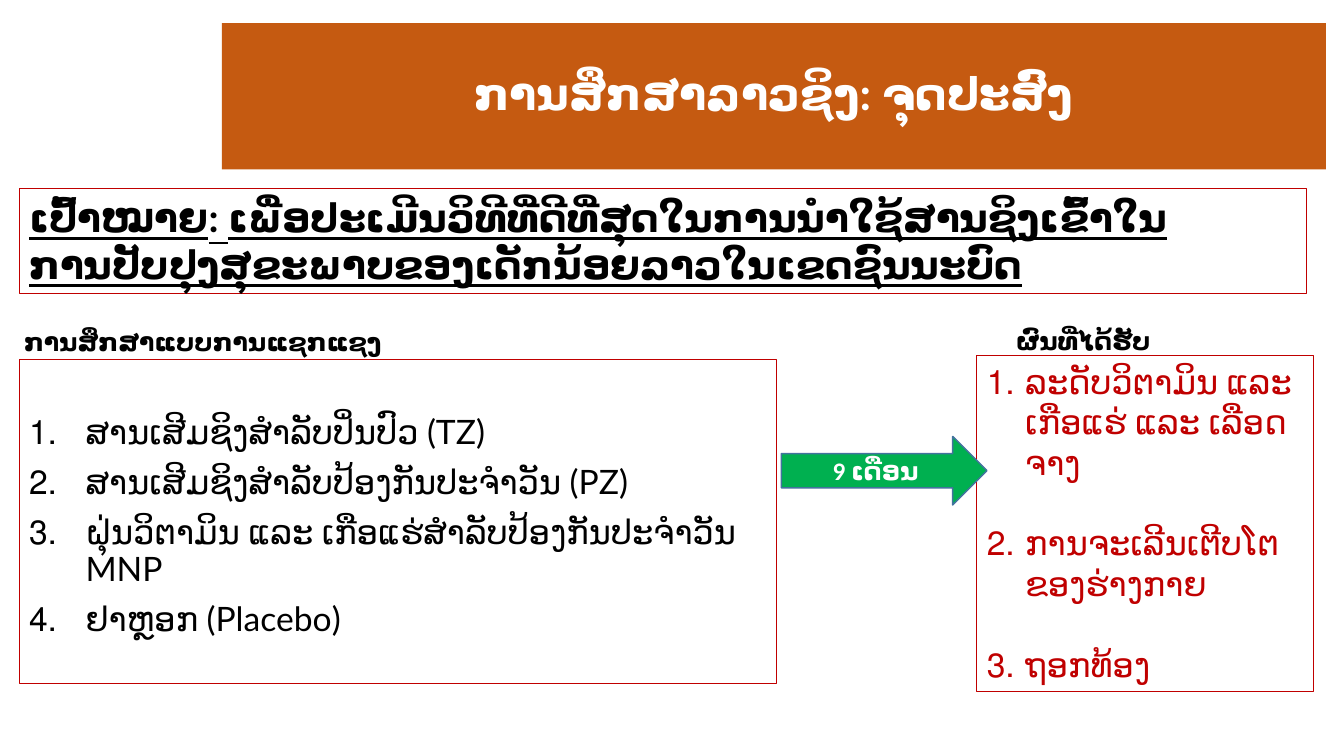
import dataclasses

import lxml.etree
import pptx
import pptx.dml.color
import pptx.enum.shapes
import pptx.enum.text
import pptx.oxml.ns
import pptx.util

SLIDE_WIDTH = pptx.util.Inches(13.33)
SLIDE_HEIGHT = pptx.util.Inches(7.5)
ALIGN = pptx.enum.text.PP_ALIGN
ANCHOR = pptx.enum.text.MSO_ANCHOR
SHAPE = pptx.enum.shapes.MSO_SHAPE


@dataclasses.dataclass(frozen=True)
class Theme:
    banner: str = "C55A11"
    frame: str = "C00000"
    arrow: str = "00B050"
    arrow_edge: str = "43739E"
    ink: str = "000000"
    paper: str = "FFFFFF"
    font: str = "Lato"
    arrow_font: str = "Calibri"
    number_font: str = "Arial"
    title_size: int = 32
    goal_size: int = 28
    list_size: int = 24
    label_size: int = 18


THEME = Theme()


def rgb(code):
    return pptx.dml.color.RGBColor.from_string(code)


def area(left, top, width, height):
    return (
        int(SLIDE_WIDTH * left / 100),
        int(SLIDE_HEIGHT * top / 100),
        int(SLIDE_WIDTH * width / 100),
        int(SLIDE_HEIGHT * height / 100),
    )


def paint(shape, fill, edge, edge_width):
    shape.shadow.inherit = False
    shape.fill.solid()
    shape.fill.fore_color.rgb = rgb(fill)
    shape.line.color.rgb = rgb(edge)
    shape.line.width = pptx.util.Pt(edge_width)


def style(paragraph, size, color, bold=False, underline=None, font=THEME.font):
    for run in paragraph.runs:
        run.font.name = font
        run.font.size = pptx.util.Pt(size)
        run.font.color.rgb = rgb(color)
        run.font.bold = bold
        run.font.underline = underline


def number(paragraph, indent):
    properties = paragraph._p.get_or_add_pPr()
    properties.set("marL", str(pptx.util.Inches(indent)))
    properties.set("indent", str(-pptx.util.Inches(indent)))
    qn = pptx.oxml.ns.qn
    lxml.etree.SubElement(properties, qn("a:buFont"), typeface=THEME.number_font)
    lxml.etree.SubElement(properties, qn("a:buAutoNum"), type="arabicPeriod")


def add_title(slide, text, place):
    title = slide.shapes.title
    title.left, title.top, title.width, title.height = place
    title.fill.solid()
    title.fill.fore_color.rgb = rgb(THEME.banner)
    frame = title.text_frame
    frame.text = text
    frame.vertical_anchor = ANCHOR.MIDDLE
    heading = frame.paragraphs[0]
    heading.alignment = ALIGN.CENTER
    heading.line_spacing = 0.9
    style(heading, THEME.title_size, THEME.paper, bold=True)


def add_framed_box(slide, place):
    box = slide.shapes.add_shape(SHAPE.RECTANGLE, *place)
    paint(box, THEME.paper, THEME.frame, 0.75)
    box.text_frame.word_wrap = True
    box.text_frame.vertical_anchor = ANCHOR.TOP
    return box.text_frame


def add_goal(slide, text, place):
    frame = add_framed_box(slide, place)
    frame.text = text
    frame.paragraphs[0].alignment = ALIGN.LEFT
    style(frame.paragraphs[0], THEME.goal_size, THEME.ink, bold=True, underline=True)


def add_numbered_list(slide, items, place, color, indent, gap, spacing=1.0, top=0.05):
    frame = add_framed_box(slide, place)
    frame.margin_top = pptx.util.Inches(top)
    frame.text = "\n".join(items)
    for position, item in enumerate(frame.paragraphs):
        number(item, indent)
        item.alignment = ALIGN.LEFT
        item.line_spacing = spacing
        item.space_before = pptx.util.Pt(gap if position else 0)
        style(item, THEME.list_size, color)


def add_label(slide, text, place):
    frame = slide.shapes.add_textbox(*place).text_frame
    frame.word_wrap = True
    frame.text = text
    style(frame.paragraphs[0], THEME.label_size, THEME.ink, bold=True)


def add_duration_arrow(slide, text, place):
    arrow = slide.shapes.add_shape(SHAPE.RIGHT_ARROW, *place)
    paint(arrow, THEME.arrow, THEME.arrow_edge, 1)
    frame = arrow.text_frame
    frame.margin_top = frame.margin_bottom = 0
    frame.text = text
    frame.vertical_anchor = ANCHOR.MIDDLE
    frame.paragraphs[0].alignment = ALIGN.CENTER
    style(frame.paragraphs[0], THEME.label_size, THEME.paper, bold=True, font=THEME.arrow_font)


def main():
    deck = pptx.Presentation()
    deck.slide_width = SLIDE_WIDTH
    deck.slide_height = SLIDE_HEIGHT
    slide = deck.slides.add_slide(deck.slide_layouts.get_by_name("Title Only"))

    add_title(slide, "ການສຶກສາລາວຊິງ: ຈຸດປະສົງ", area(16.5, 3.07, 82.15, 19.33))
    add_numbered_list(
        slide,
        [
            "ສານເສີມຊິງສຳລັບປິ່ນປົວ (TZ)",
            "ສານເສີມຊິງສຳລັບປ້ອງກັນປະຈຳວັນ (PZ)",
            "ຝຸ່ນວິຕາມິນ ແລະ ເກືອແຮ່ສຳລັບປ້ອງກັນປະຈຳວັນ MNP",
            "ຢາຫຼອກ (Placebo)",
        ],
        area(1.43, 47.6, 56.34, 42.8),
        THEME.ink, indent=0.56, gap=10, spacing=0.9, top=0.55,
    )
    add_numbered_list(
        slide,
        [
            "ລະດັບວິຕາມິນ ແລະ ເກືອແຮ່ ແລະ ເລືອດຈາງ",
            "ການຈະເລີນເຕີບໂຕຂອງຮ່າງກາຍ",
            "ຖອກທ້ອງ",
        ],
        area(72.69, 47.07, 25.06, 44.4),
        THEME.frame, indent=0.38, gap=29,
    )
    add_duration_arrow(slide, "9 ເດືອນ", area(58.14, 57.73, 15.3, 9.07))
    add_label(slide, "ການສຶກສາແບບການແຊກແຊງ", area(1.05, 42.53, 44.34, 5.33))
    add_label(slide, "ຜົນທີ່ໄດ້ຮັບ", area(74.87, 42.4, 15, 5.47))
    add_goal(
        slide,
        "ເປົ້າໝາຍ: ເພື່ອປະເມີນວິທີທີ່ດີທີ່ສຸດໃນການນຳໃຊ້ສານຊິງເຂົ້າໃນການປັບປຸງສຸຂະພາບຂອງເດັກນ້ອຍລາວໃນເຂດຊົນນະບົດ",
        area(1.43, 24.93, 95.8, 13.87),
    )
    deck.save("out.pptx")


if __name__ == "__main__":
    main()
